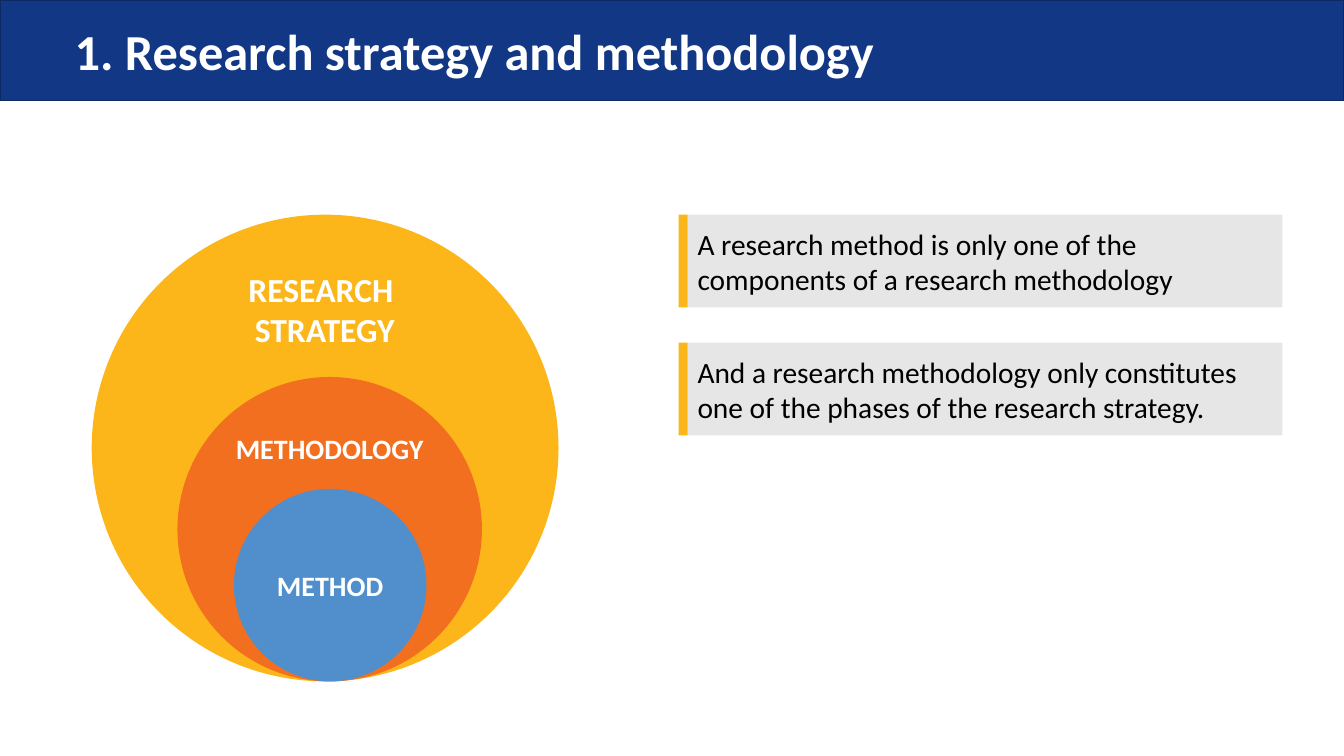
from pptx import Presentation
from pptx.dml.color import RGBColor
from pptx.enum import shapes as kind, text as txt
from pptx.util import Inches, Pt

HUES = {"navy": "123885", "edge": "0D2962", "gold": "FCB61A", "rust": "F26F20",
        "blue": "508FCC", "gray": "E7E6E6", "white": "FFFFFF", "black": "000000"}
FORM = kind.MSO_SHAPE
MID = txt.MSO_ANCHOR.MIDDLE


def hue(name):
    """Return the named colour."""
    return RGBColor.from_string(HUES[name])


def block(host, form, box, fill):
    """Add a flat shape without an outline."""
    shape = host.add_shape(form, *map(Inches, box))
    shape.shadow.inherit = False
    shape.fill.solid()
    shape.fill.fore_color.rgb = hue(fill)
    shape.line.fill.background()
    return shape


def write(shape, lines, size, color, bold=False, align=txt.PP_ALIGN.CENTER):
    """Fill a shape with paragraphs of one style."""
    frame = shape.text_frame
    frame.word_wrap = True
    frame.text = "\n".join(lines)
    for para in frame.paragraphs:
        para.alignment = align
        font = para.font
        font.name, font.size, font.bold = "Calibri", Pt(size), bold
        font.color.rgb = hue(color)
    return frame


def header(slide, box, words):
    """Draw the banner and set the title on top of it."""
    left, top, width, height = box
    band = block(slide.shapes, FORM.RECTANGLE, box, "navy")
    band.line.color.rgb = hue("edge")
    band.line.width = Pt(1)
    title = slide.shapes.title
    band.element.addnext(title.element)
    title.left, title.top = Inches(left + 0.64), Inches(top + 0.13)
    title.width, title.height = Inches(width - 2.59), Inches(height - 0.18)
    frame = write(title, [words], 36, "white", True, txt.PP_ALIGN.LEFT)
    frame.vertical_anchor = MID
    frame.paragraphs[0].line_spacing = 0.9


def nest(slide, box):
    """Draw circles that share a base, with their labels."""
    left, top, width, height = box
    group = slide.shapes.add_group_shape().shapes
    discs = [("gold", 0, width), ("rust", 0.85, 3.02), ("blue", 1.41, 1.91)]
    for fill, shift, size in discs:
        spot = (left + shift, top + height - size, size, size)
        disc = block(group, FORM.OVAL, spot, fill)
    frame = write(disc, ["METHOD"], 20, "white", True)
    frame.vertical_anchor = MID
    frame.margin_left = frame.margin_right = 0
    frame.margin_top = frame.margin_bottom = 0
    labels = [(["RESEARCH ", "STRATEGY"], 24, 1.22, 0.49, 0.91),
              (["METHODOLOGY"], 20, 1.27, 2.1, 0.44)]
    for lines, size, shift, drop, tall in labels:
        spot = (left + shift, top + drop, 2.18, tall)
        label = slide.shapes.add_textbox(*map(Inches, spot))
        write(label, lines, size, "white", True)


def note(slide, box, words):
    """Draw a gray note with a gold bar at its left."""
    left, top, width, height = box
    bar = 0.09
    panel = block(slide.shapes, FORM.RECTANGLE,
                  (left + bar, top, width - bar, height), "gray")
    frame = write(panel, [words], 21, "black", align=txt.PP_ALIGN.LEFT)
    frame.vertical_anchor = MID
    block(slide.shapes, FORM.RECTANGLE, (left, top, bar, height), "gold")


def main():
    """Build and save the slide."""
    deck = Presentation()
    deck.slide_width, deck.slide_height = Inches(13.33), Inches(7.5)
    slide = deck.slides.add_slide(deck.slide_layouts[5])
    header(slide, (0, 0, 13.33, 1), "1. Research strategy and methodology")
    nest(slide, (0.91, 2.13, 4.63, 4.63))
    notes = ["A research method is only one of the components of a research methodology",
             "And a research methodology only constitutes one of the phases of the research strategy."]
    for row, words in enumerate(notes):
        note(slide, (6.73, 2.13 + row * 1.27, 5.99, 0.92), words)
    deck.save("out.pptx")


if __name__ == "__main__":
    main()
